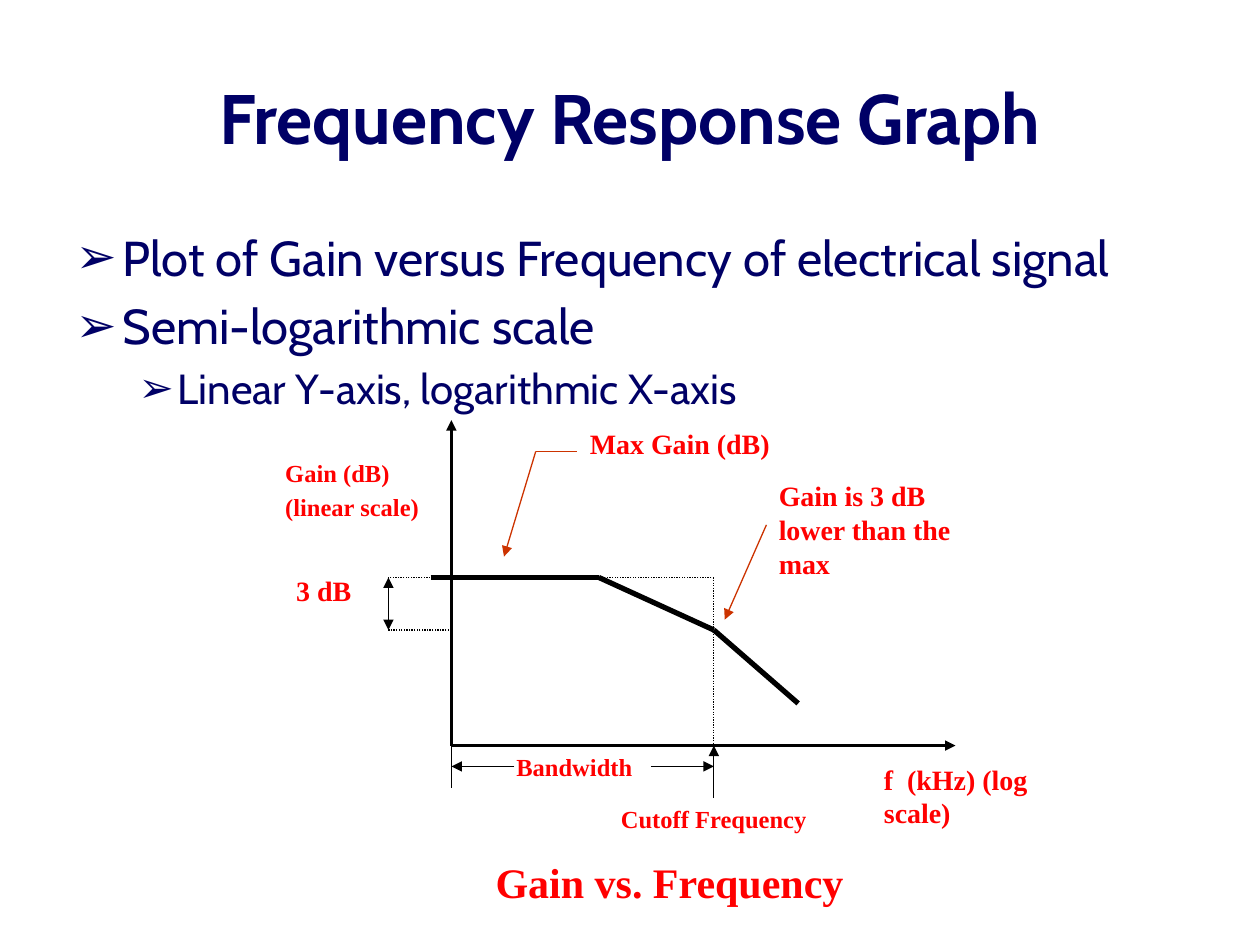
from dataclasses import dataclass

from lxml.etree import SubElement
from pptx import Presentation
from pptx.dml.color import RGBColor
from pptx.enum.dml import MSO_LINE
from pptx.enum.shapes import MSO_CONNECTOR
from pptx.enum.text import MSO_ANCHOR, MSO_AUTO_SIZE, PP_ALIGN
from pptx.oxml.ns import qn
from pptx.util import Cm, Pt

COLORS = {"navy": "000066", "label": "FF0000", "ink": "000000", "pointer": "CC3300"}
HEADING_FONT = "Cabin"
LABEL_FONT = "Times New Roman"

AXIS_X, AXIS_Y = 9.1, 15.03
MARK_X, CUTOFF_X = 7.83, 14.39
MAX_GAIN_Y, CUTOFF_Y = 11.64, 12.7
KNEE_X = 12.07
BANDWIDTH_Y = 15.45
CUTOFF_LABEL_Y = 16.09


@dataclass
class Bullet:
    text: str
    level: int
    size: int
    margin: float
    hanging: float


@dataclass
class Label:
    lines: tuple[str, ...]
    left: float
    top: float
    width: float
    height: float
    size: int = 16
    centered: bool = False
    wrap: bool = True


@dataclass
class Line:
    start: tuple[float, float]
    end: tuple[float, float]
    width: float = 0.75
    color: str = "ink"
    dotted: bool = False
    head: bool = False
    tail: bool = False


BULLETS = [
    Bullet("Plot of Gain versus Frequency of electrical signal", 0, 28, 0.95, 0.95),
    Bullet("Semi-logarithmic scale", 0, 28, 0.95, 0.95),
    Bullet("Linear Y-axis, logarithmic X-axis", 1, 24, 2.06, 0.79),
]

CUTOFF_LABEL = Label(("Cutoff Frequency",), CUTOFF_X - 2.54, CUTOFF_LABEL_Y, 5.08, 0.85, 14, centered=True)
LABELS = [
    Label(("3 dB",), 5.72, 11.43, 2.12, 0.94),
    Label(("f  (kHz) (log scale)",), 17.57, 15.24, 3.81, 1.63),
    Label(("Gain (dB)", "(linear scale)"), 5.5, 9.1, 4.23, 1.55, 14),
    Label(("Gain vs. Frequency",), 9.74, 17.15, 8.89, 1.27, 24),
    Label(("Max Gain (dB)",), 11.64, 8.47, 4.87, 0.94),
    Label(("Gain is 3 dB lower than the max",), 15.45, 9.53, 4.66, 2.28),
    Label(("Bandwidth",), 10.16, 15.03, 3.2, 0.85, 14, wrap=False),
]

CURVE = [(8.68, MAX_GAIN_Y), (KNEE_X, MAX_GAIN_Y), (CUTOFF_X, CUTOFF_Y), (16.09, 14.18)]
CUTOFF_ARROW = Line((CUTOFF_X, CUTOFF_LABEL_Y), (CUTOFF_X, AXIS_Y), tail=True)
LINES = [
    *(Line(start, end, width=3) for start, end in zip(CURVE, CURVE[1:])),
    Line((MARK_X, MAX_GAIN_Y), (MARK_X, CUTOFF_Y), head=True, tail=True),
    Line((CUTOFF_X, MAX_GAIN_Y), (MARK_X, MAX_GAIN_Y), dotted=True),
    Line((AXIS_X, CUTOFF_Y), (MARK_X, CUTOFF_Y), dotted=True),
    Line((CUTOFF_X, MAX_GAIN_Y), (CUTOFF_X, AXIS_Y), dotted=True),
    Line((AXIS_X, 8.47), (AXIS_X, AXIS_Y), width=1.5, head=True),
    Line((AXIS_X, AXIS_Y), (19.26, AXIS_Y), width=1.5, tail=True),
    Line((10.8, 9.1), (10.16, 11.22), color="pointer", tail=True),
    Line((10.8, 9.1), (11.64, 9.1), color="pointer"),
    Line((15.45, 10.58), (14.61, 12.49), color="pointer", tail=True),
    Line((10.37, BANDWIDTH_Y), (AXIS_X, BANDWIDTH_Y), tail=True),
    Line((13.12, BANDWIDTH_Y), (CUTOFF_X, BANDWIDTH_Y), tail=True),
    Line((AXIS_X, AXIS_Y), (AXIS_X, 15.88)),
]


def place(shape, left: float, top: float, width: float, height: float) -> None:
    shape.left, shape.top = Cm(left), Cm(top)
    shape.width, shape.height = Cm(width), Cm(height)


def add_run(paragraph, text: str, font: str, size: int, color: str, bold: bool = False) -> None:
    run = paragraph.add_run()
    run.text = text
    run.font.name = font
    run.font.size = Pt(size)
    run.font.bold = bold
    run.font.color.rgb = RGBColor.from_string(COLORS[color])


def next_paragraph(text_frame, index: int):
    return text_frame.add_paragraph() if index else text_frame.paragraphs[0]


def fill_title(title) -> None:
    place(title, 1.27, 0.76, 22.86, 3.18)
    title.text_frame.vertical_anchor = MSO_ANCHOR.MIDDLE
    paragraph = title.text_frame.paragraphs[0]
    paragraph.alignment = PP_ALIGN.CENTER
    add_run(paragraph, "Frequency Response Graph", HEADING_FONT, 40, "navy", bold=True)


def fill_body(body) -> None:
    place(body, 1.27, 4.45, 22.86, 12.57)
    body.text_frame.auto_size = MSO_AUTO_SIZE.NONE
    for index, bullet in enumerate(BULLETS):
        paragraph = next_paragraph(body.text_frame, index)
        paragraph.level = bullet.level
        properties = paragraph._p.get_or_add_pPr()
        properties.set("marL", str(Cm(bullet.margin)))
        properties.set("indent", str(-Cm(bullet.hanging)))
        SubElement(properties, qn("a:buChar"), char="➢")
        paragraph.space_before = Pt(0.2 * bullet.size if index else 0)
        add_run(paragraph, bullet.text, HEADING_FONT, bullet.size, "navy")


def add_label(slide, label: Label):
    box = slide.shapes.add_textbox(Cm(label.left), Cm(label.top), Cm(label.width), Cm(label.height))
    box.text_frame.word_wrap = label.wrap
    for index, text in enumerate(label.lines):
        paragraph = next_paragraph(box.text_frame, index)
        paragraph.alignment = PP_ALIGN.CENTER if label.centered else PP_ALIGN.LEFT
        paragraph.space_before = Pt(0.2 * label.size if index else 0)
        add_run(paragraph, text, LABEL_FONT, label.size, "label", bold=True)
    return box


def add_line(slide, line: Line):
    ends = [Cm(value) for value in (*line.start, *line.end)]
    connector = slide.shapes.add_connector(MSO_CONNECTOR.STRAIGHT, *ends)
    connector.line.width = Pt(line.width)
    connector.line.color.rgb = RGBColor.from_string(COLORS[line.color])
    if line.dotted:
        connector.line.dash_style = MSO_LINE.ROUND_DOT
    outline = connector.line._get_or_add_ln()
    for tag, wanted in (("a:headEnd", line.head), ("a:tailEnd", line.tail)):
        if wanted:
            SubElement(outline, qn(tag), type="triangle")
    SubElement(connector._element.spPr, qn("a:effectLst"))
    return connector


def main() -> None:
    presentation = Presentation()
    presentation.slide_width, presentation.slide_height = Cm(25.4), Cm(19.05)
    slide = presentation.slides.add_slide(presentation.slide_layouts[1])
    fill_title(slide.shapes.title)
    fill_body(slide.placeholders[1])
    for line in LINES:
        add_line(slide, line)
    for label in LABELS:
        add_label(slide, label)
    cutoff_box = add_label(slide, CUTOFF_LABEL)
    add_line(slide, CUTOFF_ARROW).begin_connect(cutoff_box, 0)
    presentation.save("out.pptx")


if __name__ == "__main__":
    main()
